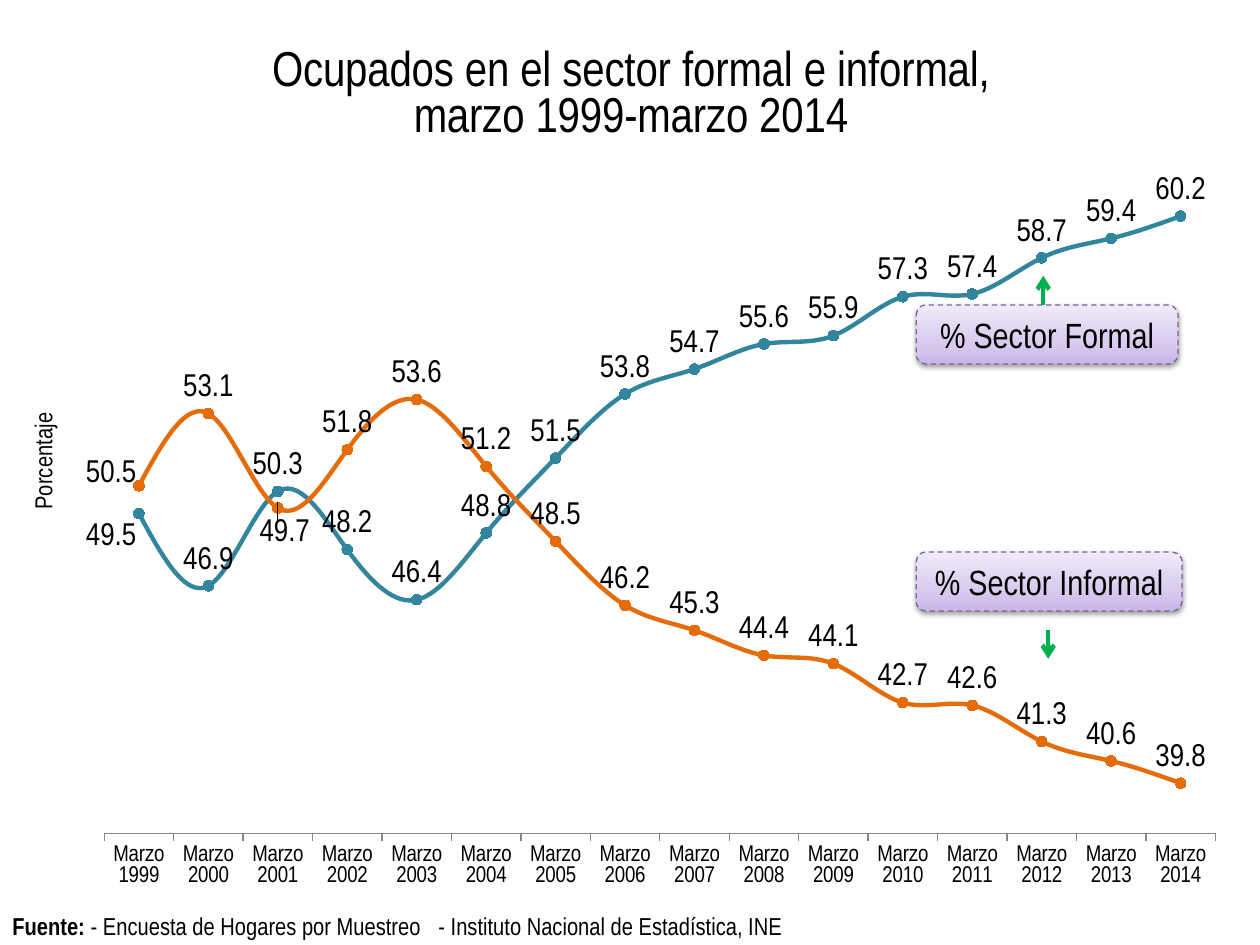
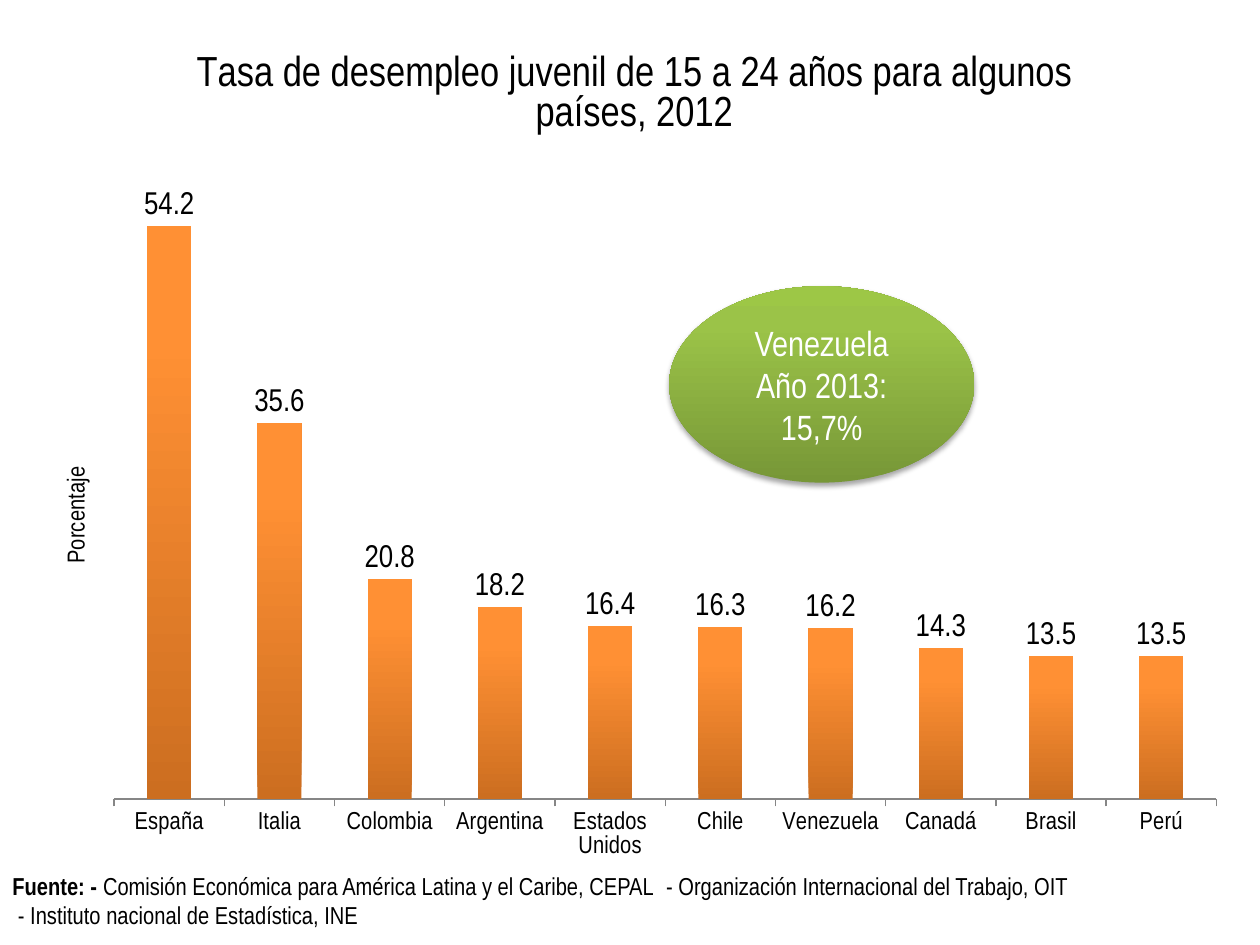
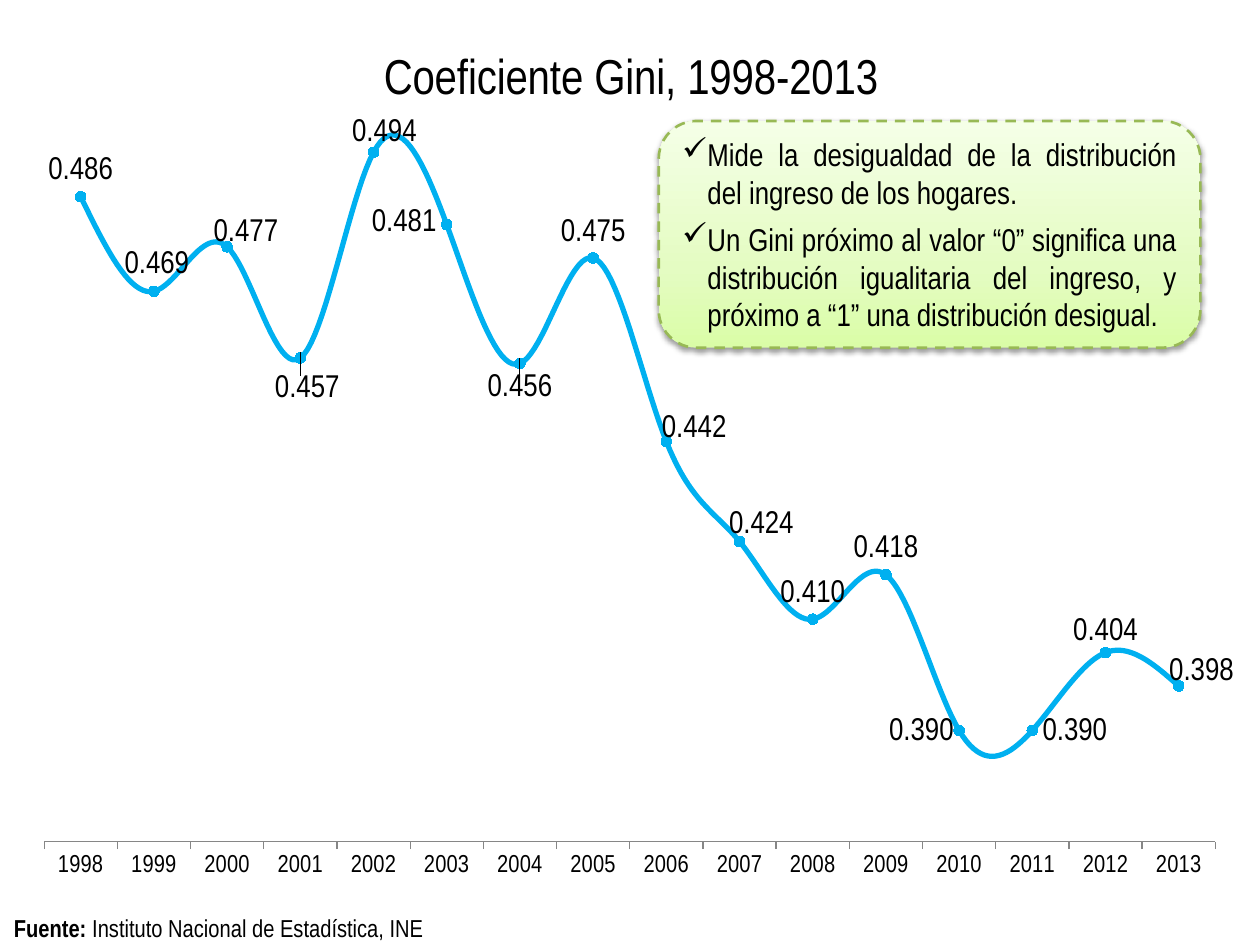
from lxml.etree import SubElement
from pptx import Presentation
from pptx.chart.data import CategoryChartData
from pptx.dml.color import RGBColor
from pptx.enum.chart import XL_CHART_TYPE, XL_LABEL_POSITION, XL_MARKER_STYLE, XL_TICK_LABEL_POSITION, XL_TICK_MARK
from pptx.enum.dml import MSO_LINE
from pptx.enum.shapes import MSO_CONNECTOR, MSO_SHAPE
from pptx.enum.text import MSO_ANCHOR, PP_ALIGN
from pptx.oxml.ns import qn
from pptx.util import Cm, Pt

COLORS = {
    "text": "000000", "white": "FFFFFF", "axis": "868686",
    "formal": "31859C", "informal": "E46C0A", "gini": "00B0F0",
    "arrow": "00B050", "tag_border": "7D60A0", "note_border": "98B955",
}
GRADIENTS = {
    "tag": [(0, "C9B5E8"), (35, "D8CBEE"), (100, "F0EAF9")],
    "note": [(0, "DAFDA7"), (35, "E4FCC2"), (100, "F5FFE7")],
    "ellipse": [(0, "779737"), (80, "9BC348"), (100, "9DC746")],
    "bars": [(0, "CC6E20"), (80, "FF9034"), (100, "FF9136")],
}
FONT = "Arial Narrow"
CHART_FONT = "Calibri"


def rgb(name):
    """Return the palette colour with this name."""
    return RGBColor.from_string(COLORS[name])


def style_font(font, size, color="text", bold=False, name=FONT):
    """Set the face, size, weight and colour of a font."""
    font.name, font.size, font.bold = name, Pt(size), bold
    font.color.rgb = rgb(color)


def write(frame, text, size=14, color="text", lead="", align=None, gap=0, bullet=None, tab=None):
    """Fill a text frame, one paragraph per line, with an optional bold lead."""
    for number, line in enumerate(text.split("\n")):
        para = frame.add_paragraph() if number else frame.paragraphs[0]
        if align is not None:
            para.alignment = align
        if number and gap:
            para.space_before = Pt(gap)
        parts = [(lead, True), (line, False)] if lead and not number else [(line, False)]
        for words, bold in parts:
            span = para.add_run()
            span.text = words
            style_font(span.font, size, color, bold)
        properties = para._p.get_or_add_pPr()
        if bullet:
            properties.set("marL", str(Cm(0.51)))
            properties.set("indent", str(-Cm(0.51)))
            SubElement(properties, qn("a:buChar"), char=bullet)
        if tab and not number:
            stops = SubElement(properties, qn("a:tabLst"))
            SubElement(stops, qn("a:tab"), pos=str(Cm(tab)), algn="l")


def paint_gradient(fill, properties, stops):
    """Paint a vertical gradient that rises from the first stop."""
    fill.gradient()
    fill.gradient_angle = 90
    stop_list = next(properties.iter(qn("a:gsLst")))
    for stop in list(stop_list):
        stop_list.remove(stop)
    for position, color in stops:
        stop = SubElement(stop_list, qn("a:gs"), pos=str(position * 1000))
        SubElement(stop, qn("a:srgbClr"), val=color)


def add_callout(page, kind, box, gradient, text, border=None, width=0.75, distance=1.6, opacity=38, **form):
    """Add a shaded shape with a soft shadow and text."""
    shape = page.shapes.add_shape(kind, *map(Cm, box))
    properties = shape._element.spPr
    paint_gradient(shape.fill, properties, GRADIENTS[gradient])
    if border:
        shape.line.color.rgb = rgb(border)
        shape.line.width = Pt(width)
        shape.line.dash_style = MSO_LINE.DASH
    else:
        shape.line.fill.background()
    shape.shadow.inherit = False
    shadow = SubElement(properties.find(qn("a:effectLst")), qn("a:outerShdw"), blurRad=str(Pt(3.1)),
                        dist=str(Pt(distance)), dir="5400000", rotWithShape="0")
    shade = SubElement(shadow, qn("a:srgbClr"), val=COLORS["text"])
    SubElement(shade, qn("a:alpha"), val=str(opacity * 1000))
    shape.text_frame.word_wrap = True
    shape.text_frame.vertical_anchor = MSO_ANCHOR.MIDDLE
    write(shape.text_frame, text, **form)


def add_arrow(page, x, start, end):
    """Add a vertical green arrow."""
    arrow = page.shapes.add_connector(MSO_CONNECTOR.STRAIGHT, Cm(x), Cm(start), Cm(x), Cm(end))
    arrow.line.color.rgb = rgb("arrow")
    arrow.line.width = Pt(2.5)
    arrow.line.dash_style = MSO_LINE.DASH
    SubElement(arrow.line._get_or_add_ln(), qn("a:tailEnd"), type="arrow")
    SubElement(arrow._element.spPr, qn("a:effectLst"))


def add_source(page, box, text, lead="Fuente:", **form):
    """Add the source line at the foot of a page."""
    frame = page.shapes.add_textbox(*map(Cm, box)).text_frame
    frame.word_wrap = True
    frame.vertical_anchor = MSO_ANCHOR.MIDDLE
    write(frame, text, lead=lead, **form)


def set_layout(parent, index, box, **values):
    """Give a chart part a manual layout, as lengths within the chart box."""
    old = parent.find(qn("c:layout"))
    if old is not None:
        parent.remove(old)
    layout = parent.makeelement(qn("c:layout"))
    parent.insert(index, layout)
    manual = SubElement(layout, qn("c:manualLayout"))
    for key, value in values.items():
        if key in ("x", "w"):
            value = round(value / box[2], 4)
        elif key in ("y", "h"):
            value = round(value / box[3], 4)
        SubElement(manual, qn(f"c:{key}"), val=str(value))


def add_chart(page, kind, box, categories, rows, title, plot, limits,
              title_size=28, axis_size=14, number_format="0.0", axis_title=None):
    """Add a chart with a title, a category axis and value labels."""
    data = CategoryChartData(number_format=number_format)
    data.categories = categories
    for number, values in enumerate(rows, 1):
        data.add_series(f"Series {number}", values)
    chart = page.shapes.add_chart(kind, *map(Cm, box), data).chart
    style_font(chart.font, 10, name=CHART_FONT)
    chart.has_legend = False
    chart.has_title = True
    write(chart.chart_title.text_frame, title, size=title_size)

    category = chart.category_axis
    category.has_major_gridlines = False
    category.major_tick_mark = XL_TICK_MARK.OUTSIDE
    category.tick_label_position = XL_TICK_LABEL_POSITION.LOW
    category.format.line.color.rgb = rgb("axis")
    category.format.line.width = Pt(0.75)
    style_font(category.tick_labels.font, axis_size)

    value = chart.value_axis
    value.has_major_gridlines = False
    value.minimum_scale, value.maximum_scale = limits
    value.visible = False
    if axis_title:
        heading = value.axis_title
        write(heading.text_frame, "Porcentaje")
        body = heading.text_frame._txBody.bodyPr
        body.set("rot", "-5400000")
        body.set("vert", "horz")
        x, y = axis_title
        set_layout(heading._element, 1, box, xMode="edge", yMode="edge", x=x, y=y)

    x, y, w, h = plot
    set_layout(chart._chartSpace.chart.plotArea, 0, box, layoutTarget="inner",
               xMode="edge", yMode="edge", x=x, y=y, w=w, h=h)

    chart.plots[0].vary_by_categories = False
    for series in chart.plots[0].series:
        labels = series.data_labels
        labels.show_value = True
        labels.number_format = number_format
        labels.number_format_is_linked = False
        labels.position = (XL_LABEL_POSITION.OUTSIDE_END if kind == XL_CHART_TYPE.COLUMN_CLUSTERED
                           else XL_LABEL_POSITION.ABOVE)
        style_font(labels.font, 18)
    return chart


def style_line(series, color, width, box, shifts):
    """Colour a smooth line and shift some of its labels."""
    series.smooth = True
    series.format.line.color.rgb = rgb(color)
    series.format.line.width = Pt(width)
    series.marker.style = XL_MARKER_STYLE.CIRCLE
    series.marker.size = 6
    series.marker.format.fill.solid()
    series.marker.format.fill.fore_color.rgb = rgb(color)
    series.marker.format.line.color.rgb = rgb(color)
    for index, (x, y) in shifts.items():
        label = series.points[index].data_label
        style_font(label.font, 18)
        label.position = XL_LABEL_POSITION.ABOVE
        set_layout(label._get_or_add_dLbl(), 1, box, x=x, y=y)


def build_sectors(page):
    """Build the page on formal and informal work."""
    box = (0.41, 0.41, 24.61, 17.86)
    formal = [49.5, 46.9, 50.3, 48.2, 46.4, 48.8, 51.5, 53.8, 54.7, 55.6, 55.9, 57.3, 57.4, 58.7, 59.4, 60.2]
    informal = [50.5, 53.1, 49.7, 51.8, 53.6, 51.2, 48.5, 46.2, 45.3, 44.4, 44.1, 42.7, 42.6, 41.3, 40.6, 39.8]
    chart = add_chart(page, XL_CHART_TYPE.LINE_MARKERS, box, [f"Marzo {year}" for year in range(1999, 2015)],
                      [formal, informal], "Ocupados en el sector formal e informal,\nmarzo 1999-marzo 2014",
                      plot=(1.69, 2.94, 22.4, 13.45), limits=(38, 62), axis_size=13, axis_title=(0.13, 7.81))
    formal_line, informal_line = chart.plots[0].series
    style_line(formal_line, "formal", 2.5, box, {0: (-0.56, 0.98)})
    style_line(informal_line, "informal", 2.5, box, {0: (-0.56, 0.28), 2: (0.14, 1.02)})
    add_source(page, (0, 18.31, 16.66, 0.69),
               " - Encuesta de Hogares por Muestreo\t- Instituto Nacional de Estadística, INE", tab=8.59)
    for text, top, width in (("% Sector Formal", 6.15, 5.28), ("% Sector Informal", 11.13, 5.36)):
        add_callout(page, MSO_SHAPE.ROUNDED_RECTANGLE, (18.47, top, width, 1.19), "tag", text,
                    border="tag_border", size=20, align=PP_ALIGN.CENTER)
    add_arrow(page, 21.03, 6.15, 5.56)
    add_arrow(page, 21.13, 12.7, 13.28)


def build_unemployment(page):
    """Build the page on youth unemployment by country."""
    countries = {"España": 54.2, "Italia": 35.6, "Colombia": 20.8, "Argentina": 18.2, "Estados Unidos": 16.4,
                 "Chile": 16.3, "Venezuela": 16.2, "Canadá": 14.3, "Brasil": 13.5, "Perú": 13.5}
    chart = add_chart(page, XL_CHART_TYPE.COLUMN_CLUSTERED, (0.58, 0.41, 24.41, 17.27),
                      list(countries), [list(countries.values())],
                      "Tasa de desempleo juvenil de 15 a 24 años para algunos países, 2012", title_size=24,
                      plot=(1.72, 2.92, 22.22, 12.78), limits=(0, 60), axis_title=(0.61, 8.9))
    chart.plots[0].gap_width = 150
    bars = chart.plots[0].series[0]
    fill = bars.format.fill
    paint_gradient(fill, bars._element.find(qn("c:spPr")), GRADIENTS["bars"])
    add_source(page, (0, 17.65, 24, 0.99),
               "Comisión Económica para América Latina y el Caribe, CEPAL\t- Organización Internacional del "
               "Trabajo, OIT\n - Instituto nacional de Estadística, INE", lead="Fuente: - ", tab=13.18)
    add_callout(page, MSO_SHAPE.OVAL, (13.49, 5.77, 6.15, 3.96), "ellipse", "Venezuela Año 2013:\n15,7%",
                distance=1.8, opacity=35, size=20, color="white", align=PP_ALIGN.CENTER)


def build_gini(page):
    """Build the page on the Gini coefficient."""
    box = (0.41, 0.41, 24.61, 17.65)
    values = [0.486, 0.469, 0.477, 0.457, 0.494, 0.481, 0.456, 0.475,
              0.442, 0.424, 0.410, 0.418, 0.390, 0.390, 0.404, 0.398]
    chart = add_chart(page, XL_CHART_TYPE.LINE_MARKERS, box, [str(year) for year in range(1998, 2014)],
                      [values], "Coeficiente Gini, 1998-2013", plot=(0.48, 1.99, 23.61, 14.57),
                      limits=(0.37, 0.5), number_format="0.000")
    shifts = {1: (0.06, -0.02), 2: (0.38, 0.24), 3: (0.14, 1.14), 4: (0.22, 0.12), 5: (-0.86, 0.48),
              6: (0, 1), 8: (0.56, 0.26), 9: (0.44, 0.18), 12: (-0.76, 0.54), 13: (0.86, 0.54),
              14: (0, 0.1), 15: (0.46, 0.22)}
    style_line(chart.plots[0].series[0], "gini", 3, box, shifts)
    add_callout(page, MSO_SHAPE.ROUNDED_RECTANGLE, (13.28, 2.44, 10.92, 4.57), "note",
                "Mide la desigualdad de la distribución del ingreso de los hogares.\n"
                "Un Gini próximo al valor “0” significa una distribución igualitaria del ingreso, "
                "y próximo a “1” una distribución desigual.",
                border="note_border", width=1.5, size=18, align=PP_ALIGN.JUSTIFY, gap=5, bullet="✓")
    add_source(page, (0.03, 18.39, 10.31, 0.61), " Instituto Nacional de Estadística, INE")


def main():
    """Build the deck and save it."""
    deck = Presentation()
    deck.slide_width, deck.slide_height = Cm(25.4), Cm(19.05)
    for build in (build_sectors, build_unemployment, build_gini):
        build(deck.slides.add_slide(deck.slide_layouts[6]))
    deck.save("out.pptx")


if __name__ == "__main__":
    main()
